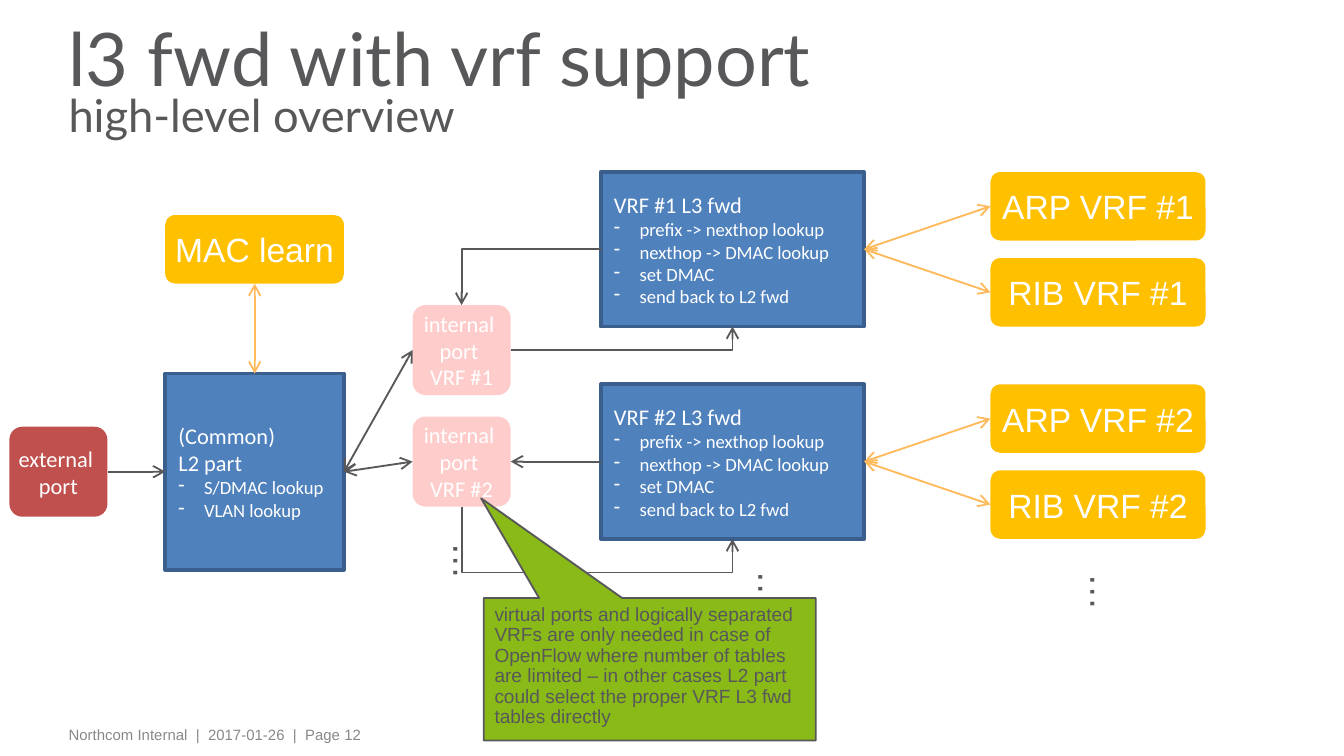
"""Build the slide on L3 forwarding with VRF support."""
from lxml import etree
from pptx import Presentation
from pptx import util as u
from pptx.dml.color import RGBColor
from pptx.enum import shapes, text
from pptx.oxml.ns import qn

COLORS = {"ink": "58585A", "footer": "87888A", "white": "FFFFFF", "table": "FFC000",
          "stage": "4F81BD", "stage_edge": "3A5F8C", "external": "C0504D",
          "internal": "FFCCCC", "sync": "FFBA5D", "note": "89BA17"}
TITLE = [("l3 fwd with vrf support", 39.6), ("high-level overview", 24.3)]
FOOTER = "Northcom Internal  |  2017-01-26  |  Page 12"
L2_STAGE = ["(Common) \vL2 part", "S/DMAC lookup", "VLAN lookup"]
L3_STEPS = ["prefix -> nexthop lookup", "nexthop -> DMAC lookup", "set DMAC", "send back to L2 fwd"]
NOTE = ("virtual ports and logically separated VRFs are only needed in case of OpenFlow "
        "where number of tables are limited – in other cases L2 part could select the "
        "proper VRF L3 fwd tables directly")
ELLIPSES = [(3.16, 3.94), (5.43, 4.15), (7.9, 4.17)]

COLUMNS = {"external": 0.07, "l2": 1.23, "port": 3.07, "l3": 4.47, "tables": 7.37}
VRF_TOP, VRF_PITCH = 1.28, 1.58
PORT_TOP, PORT_PITCH = 2.27, 0.83
TABLE_PITCH = 0.64
PORT_SIZE, L2_SIZE, L3_SIZE = (0.73, 0.67), (1.33, 1.46), (1.96, 1.15)
TABLE_HEIGHT = 0.51
TOP, LEFT, BOTTOM, RIGHT = range(4)

deck = Presentation()
deck.slide_width = u.Inches(10)
deck.slide_height = deck.slide_width * 9 // 16
page = deck.slides.add_slide(deck.slide_layouts[5])


def rgb(name):
    return RGBColor.from_string(COLORS[name])


def style(font, name, size, color):
    font.name, font.size, font.color.rgb = name, u.Pt(size), rgb(color)


def set_frame(box, insets, anchor=text.MSO_ANCHOR.MIDDLE, wrap=True):
    frame = box.text_frame
    frame.margin_left = frame.margin_right = u.Inches(insets[0])
    frame.margin_top = frame.margin_bottom = u.Inches(insets[1])
    frame.vertical_anchor, frame.word_wrap = anchor, wrap
    return frame


def write(para, words, name, size, color, align=text.PP_ALIGN.LEFT):
    para.text, para.alignment = words, align
    for span in para.runs:
        style(span.font, name, size, color)


def add_box(kind, left, top, width, height, fill, edge=None, weight=1):
    box = page.shapes.add_shape(kind, *map(u.Inches, (left, top, width, height)))
    box.shadow.inherit = False
    box.fill.solid()
    box.fill.fore_color.rgb = rgb(fill)
    if edge:
        box.line.color.rgb, box.line.width = rgb(edge), u.Pt(weight)
    else:
        box.line.fill.background()
    return box


def add_label(words, left, top, size, fill, font, points, insets):
    box = add_box(shapes.MSO_SHAPE.ROUNDED_RECTANGLE, left, top, *size, fill)
    box.adjustments[0] = 0.144
    frame = set_frame(box, insets, wrap=False)
    write(frame.paragraphs[0], words, font, points, "white", text.PP_ALIGN.CENTER)
    return box


def add_table_label(words, left, top, width):
    return add_label(words, left, top, (width, TABLE_HEIGHT), "table", "Arial", 18, (0.06, 0.04))


def add_port(words, left, top, fill):
    return add_label(words, left, top, PORT_SIZE, fill, "Calibri", 12, (0.08, 0.05))


def add_stage(lines, left, top, size):
    box = add_box(shapes.MSO_SHAPE.RECTANGLE, left, top, *size, "stage", "stage_edge", 2)
    frame = set_frame(box, (0.1, 0))
    write(frame.paragraphs[0], lines[0], "Calibri", 12, "white")
    for step in lines[1:]:
        para = frame.add_paragraph()
        props = para._p.get_or_add_pPr()
        props.set("marL", str(u.Inches(0.19)))
        props.set("indent", str(u.Inches(-0.19)))
        etree.SubElement(props, qn("a:buChar"), char="-")
        write(para, step, "Calibri", 10, "white")
    return box


def finish_line(line, color, both):
    line.line.color.rgb, line.line.width = rgb(color), u.Pt(1)
    outline = line.line._get_or_add_ln()
    for end in ("headEnd", "tailEnd") if both else ("tailEnd",):
        etree.SubElement(outline, qn("a:" + end), type="arrow")
    etree.SubElement(line._element.spPr, qn("a:effectLst"))


def link(start, start_side, end, end_side, color="ink", both=False):
    line = page.shapes.add_connector(shapes.MSO_CONNECTOR.STRAIGHT, 0, 0, 0, 0)
    line.begin_connect(start, start_side)
    line.end_connect(end, end_side)
    finish_line(line, color, both)


def side_point(box, side):
    x = {LEFT: 0, RIGHT: box.width}.get(side, box.width // 2)
    y = {TOP: 0, BOTTOM: box.height}.get(side, box.height // 2)
    return box.left + x, box.top + y


def add_elbow(start, start_side, end, end_side):
    line = page.shapes.add_connector(shapes.MSO_CONNECTOR.ELBOW,
                                     *side_point(start, start_side), *side_point(end, end_side))
    finish_line(line, "ink", False)
    return line, line._element.spPr.find(qn("a:prstGeom"))


def add_corner(*ends):
    add_elbow(*ends)[1].set("prst", "bentConnector2")


def add_underpass(start, end, drop):
    line, geometry = add_elbow(start, BOTTOM, end, BOTTOM)
    center_x, center_y = line.left + line.width // 2, line.top + line.height // 2
    line.width, line.height = line.height, line.width
    line.left, line.top = center_x - line.width // 2, center_y - line.height // 2
    frame = line._element.spPr.find(qn("a:xfrm"))
    frame.set("rot", str(270 * 60000))
    frame.set("flipH", "1")
    guides = geometry.find(qn("a:avLst"))
    if guides is None:
        guides = etree.SubElement(geometry, qn("a:avLst"))
    etree.SubElement(guides, qn("a:gd"), name="adj1", fmla=f"val {round(drop * 100000)}")


def add_text_box(left, top, width, height):
    return page.shapes.add_textbox(*map(u.Inches, (left, top, width, height)))


title = page.shapes.title
title.left, title.top, title.width, title.height = map(u.Inches, (0.43, 0.2, 8.2, 0.89))
heading = set_frame(title, (0.08, 0)).paragraphs[0]
write(heading, "\v".join(words for words, _ in TITLE), "Lato", TITLE[0][1], "ink")
heading.line_spacing = 0.75
heading.runs[1].font.size = u.Pt(TITLE[1][1])
etree.SubElement(heading._p.find(qn("a:br")), qn("a:rPr"), sz=str(round(TITLE[0][1] * 100)))

footer = set_frame(add_text_box(0.43, 5.35, 8.09, 0.18), (0.08, 0.05), text.MSO_ANCHOR.TOP)
write(footer.paragraphs[0], FOOTER, "Arial", 8, "footer")

mac = add_table_label("MAC learn", COLUMNS["l2"], 1.6, L2_SIZE[0])
l2 = add_stage(L2_STAGE, COLUMNS["l2"], 2.78, L2_SIZE)
external_top = 2.78 + (L2_SIZE[1] - PORT_SIZE[1]) / 2
external = add_port("external \vport", COLUMNS["external"], external_top, "external")
link(mac, BOTTOM, l2, TOP, "sync", True)
link(external, RIGHT, l2, LEFT)

ports, stages = [], []
for row in range(2):
    vrf = f"VRF #{row + 1}"
    top = VRF_TOP + row * VRF_PITCH
    stage = add_stage([f"{vrf} L3 fwd", *L3_STEPS], COLUMNS["l3"], top, L3_SIZE)
    port = add_port(f"internal \vport \v{vrf}", COLUMNS["port"],
                    PORT_TOP + row * PORT_PITCH, "internal")
    for slot, name in enumerate(("ARP", "RIB")):
        table = add_table_label(f"{name} {vrf}", COLUMNS["tables"], top + slot * TABLE_PITCH, 1.6)
        link(table, LEFT, stage, RIGHT, "sync", True)
    link(l2, RIGHT, port, LEFT, both=True)
    ports.append(port)
    stages.append(stage)

add_corner(ports[0], RIGHT, stages[0], BOTTOM)
add_corner(stages[0], LEFT, ports[0], TOP)
add_underpass(ports[1], stages[1], 2.04)
link(stages[1], LEFT, ports[1], RIGHT)

for left, top in ELLIPSES:
    dots = add_text_box(left, top, 0.54, 0.44).text_frame
    dots.word_wrap = True
    dots._txBody.bodyPr.set("vert", "vert")
    write(dots.paragraphs[0], "…", "Arial", 20, "ink", text.PP_ALIGN.CENTER)

note = add_box(shapes.MSO_SHAPE.RECTANGULAR_CALLOUT, 3.6, 4.45, 2.47, 1.06, "note", "ink")
note.adjustments[0], note.adjustments[1] = -0.508, -1.2
note_para = set_frame(note, (0.08, 0.05), text.MSO_ANCHOR.TOP).paragraphs[0]
write(note_para, NOTE, "Arial", 10.2, "ink")
note_para.line_spacing = 0.9

deck.save("out.pptx")
